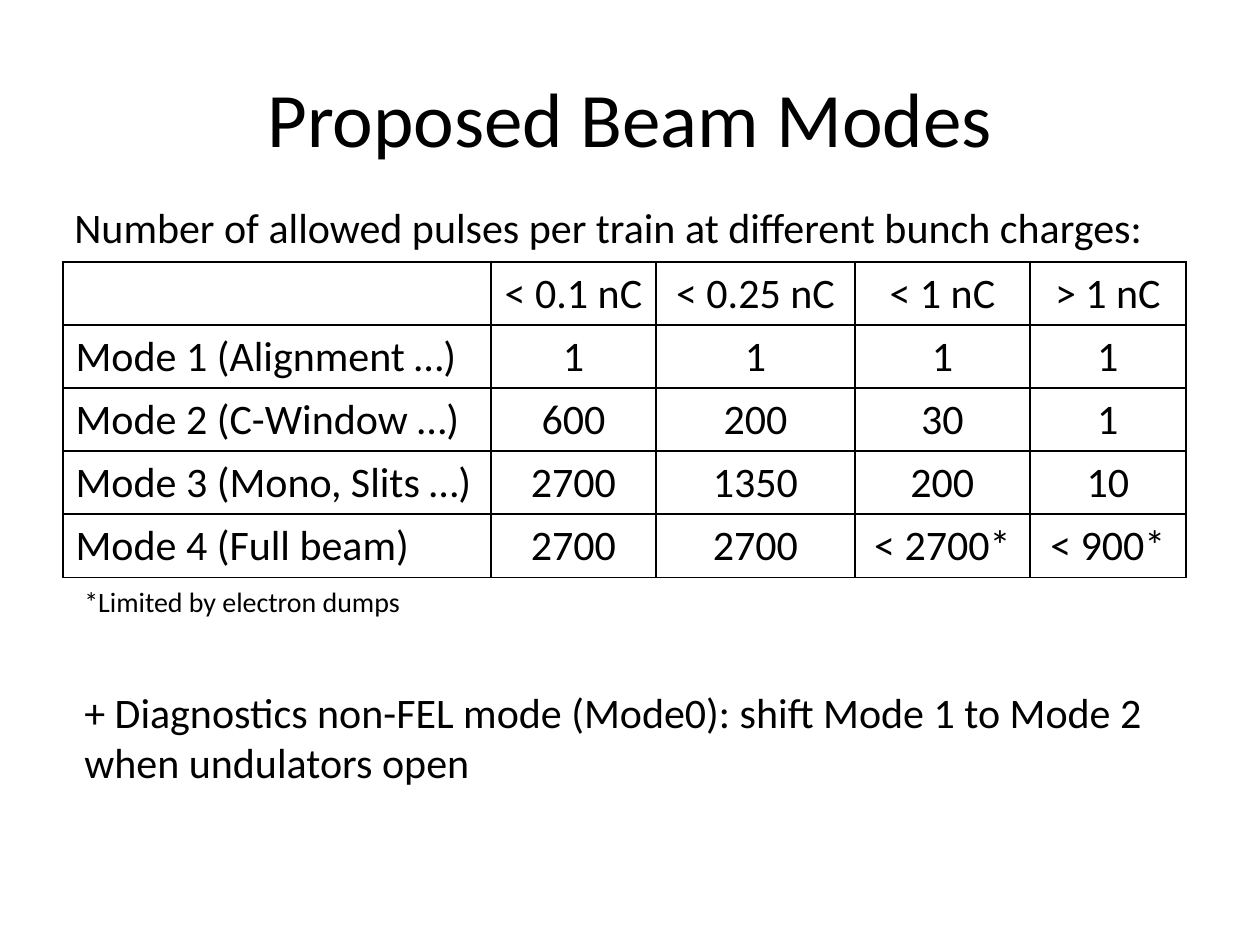
from lxml.etree import SubElement
from pptx import Presentation
from pptx.dml.color import RGBColor
from pptx.enum.text import MSO_ANCHOR, PP_ALIGN
from pptx.oxml import parse_xml
from pptx.oxml.ns import nsdecls, qn
from pptx.util import Pt

TITLE = "Proposed Beam Modes"
INTRO = "Number of allowed pulses per train at different bunch charges:"
CHARGES = ["", "< 0.1 nC", "< 0.25 nC", "< 1 nC", "> 1 nC"]
MODES = [
    ["Mode 1 (Alignment …)", "1", "1", "1", "1"],
    ["Mode 2 (C-Window …)", "600", "200", "30", "1"],
    ["Mode 3 (Mono, Slits …)", "2700", "1350", "200", "10"],
    ["Mode 4 (Full beam)", "2700", "2700", "< 2700*", "< 900*"],
]
FOOTNOTE = "*Limited by electron dumps"
DIAGNOSTICS = ("+ Diagnostics non-FEL mode (Mode0): "
               "shift Mode 1 to Mode 2 when undulators open")

THEME = {"font": "Calibri", "ink": "000000", "paper": "FFFFFF",
         "title": 44, "body": 24, "note": 16, "rule": 1}

PX_PER_INCH = 126
SLIDE = (1260, 945)
TITLE_BOX = (63, 38, 1134, 157)
INTRO_BOX = (62, 195, 1194, 63)
NOTES_BOX = (72, 578, 1160, 217)
TABLE_AT = (63, 262)
COLUMN_WIDTHS = [428, 165, 199, 175, 156]
ROW_HEIGHT = 63
NOTE_GAP = 39  # points between the footnote and the remark below it


def px(*lengths):
    return [round(length * 914400 / PX_PER_INCH) for length in lengths]


def write(paragraph, text, size, **layout):
    paragraph.text = text
    for name, value in layout.items():
        setattr(paragraph, name, value)
    formats = {"name": THEME["font"], "size": Pt(THEME[size])}
    for name, value in formats.items():
        setattr(paragraph.font, name, value)
    paragraph.font.color.rgb = RGBColor.from_string(THEME["ink"])


def add_text(slide, box, lines):
    """Add a wrapping box; each line is (text, size, space before)."""
    frame = slide.shapes.add_textbox(*px(*box)).text_frame
    frame.word_wrap = True
    for index, (text, size, gap) in enumerate(lines):
        paragraph = frame.add_paragraph() if index else frame.paragraphs[0]
        layout = {"space_before": Pt(gap)} if gap else {}
        write(paragraph, text, size, **layout)


def rule_cell(cell):
    """Draw a line on all four sides of a table cell."""
    properties = cell._tc.get_or_add_tcPr()
    for position, side in enumerate(("lnL", "lnR", "lnT", "lnB")):
        line = parse_xml(f'<a:{side} {nsdecls("a")} w="{Pt(THEME["rule"])}"/>')
        fill = SubElement(line, qn("a:solidFill"))
        SubElement(fill, qn("a:srgbClr"), val=THEME["ink"])
        properties.insert(position, line)


def add_mode_table(slide):
    rows = [CHARGES, *MODES]
    size = (sum(COLUMN_WIDTHS), ROW_HEIGHT * len(rows))
    table = slide.shapes.add_table(
        len(rows), len(CHARGES), *px(*TABLE_AT, *size)).table
    table.first_row = table.horz_banding = False
    for column, width in zip(table.columns, px(*COLUMN_WIDTHS)):
        column.width = width
    for row, values in zip(table.rows, rows):
        row.height = px(ROW_HEIGHT)[0]
        for index, (cell, value) in enumerate(zip(row.cells, values)):
            cell.fill.background()
            rule_cell(cell)
            write(cell.text_frame.paragraphs[0], value, "body",
                  alignment=PP_ALIGN.CENTER if index else PP_ALIGN.LEFT)


def main():
    deck = Presentation()
    deck.slide_width, deck.slide_height = px(*SLIDE)
    slide = deck.slides.add_slide(deck.slide_layouts[5])
    slide.background.fill.solid()
    slide.background.fill.fore_color.rgb = RGBColor.from_string(THEME["paper"])

    title = slide.shapes.title
    title.left, title.top, title.width, title.height = px(*TITLE_BOX)
    title.text_frame.vertical_anchor = MSO_ANCHOR.MIDDLE
    write(title.text_frame.paragraphs[0], TITLE, "title",
          alignment=PP_ALIGN.CENTER)

    add_text(slide, NOTES_BOX, [(FOOTNOTE, "note", 0),
                                (DIAGNOSTICS, "body", NOTE_GAP)])
    add_text(slide, INTRO_BOX, [(INTRO, "body", 0)])
    add_mode_table(slide)
    deck.save("out.pptx")


if __name__ == "__main__":
    main()
